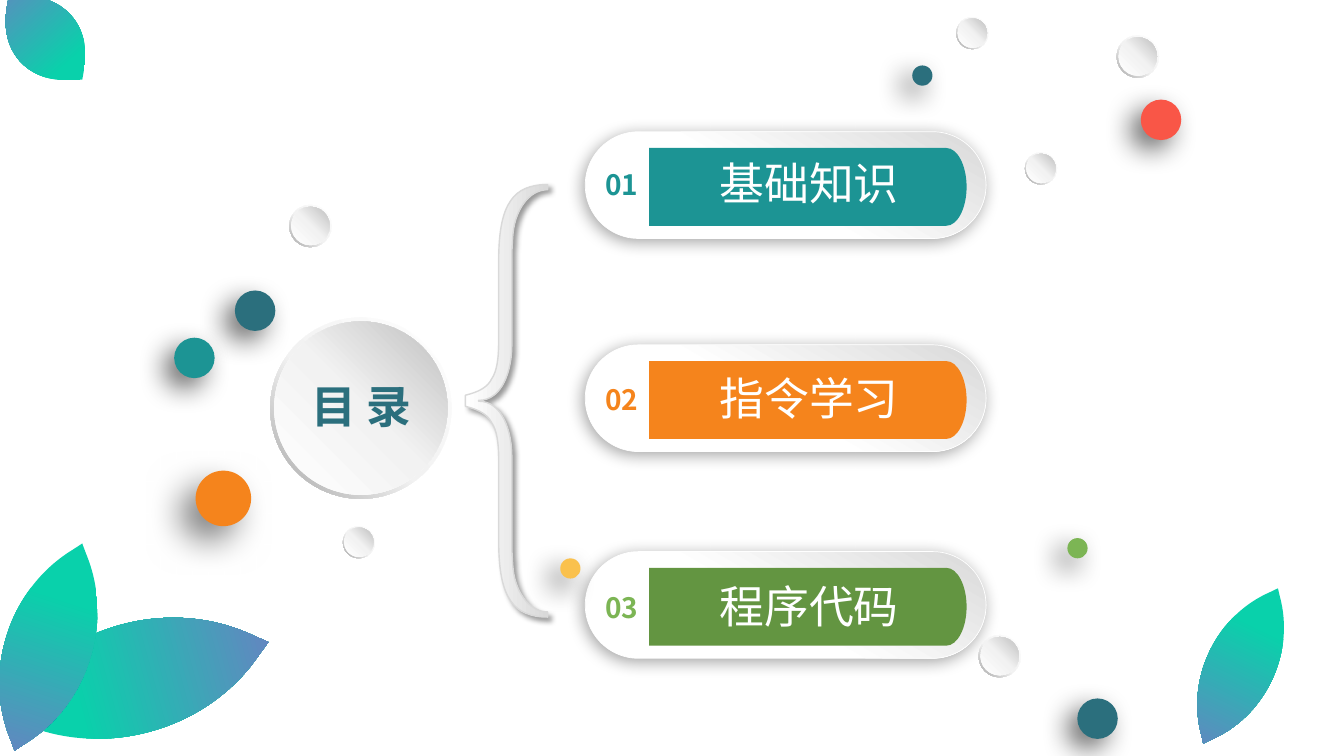
import pptx
import pptx.dml.color
import pptx.enum.shapes
import pptx.enum.text
import pptx.util
from lxml import etree
from pptx.oxml.ns import qn

Cm = pptx.util.Cm
SHAPE = pptx.enum.shapes.MSO_SHAPE
FONT = "Noto Sans CJK SC"

# Gradients: (stops as percent and colour, clockwise angle)
BANNER_FADE = ([(45, "FFFFFF"), (100, "D9D9D9")], 300)
BRACE_FADE = ([(0, "FFFFFF"), (100, "D9D9D9")], 0)
RIM_FADE = ([(0, "FFFFFF"), (55, "F2F2F2"), (100, "A6A6A6")], 135)
FACE_FADE = ([(0, "FFFFFF"), (51, "F2F2F2"), (100, "BFBFBF")], 315)
LEAF_FADE = ([(0, "09D1AB"), (31, "09D1AB"), (100, "6E7DC3")], 90)

# Shadows: opacity percent, blur pt, distance pt, direction
BANNER_SHADOW = (34, 12, 3, 135)
BRACE_SHADOW = (40, 4, 3, 45)
DOT_SHADOW = (60, 20, 10, 135)
BIG_DOT_SHADOW = (50, 25, 15, 135)

# Outlines: a segment of one point is a line, of three points a Bezier curve
LABEL = [[(0, 0)], [(7.49, 0)], [(7.77, 0), (8, 0.44), (8, 0.98)],
         [(8, 1.52), (7.77, 1.96), (7.49, 1.96)], [(0, 1.96)]]
BRACE_ARM = [[(0, 5.31)], [(0.33, 5.23), (0.56, 5.11), (0.66, 4.9)],
             [(0.79, 4.72), (0.84, 4.39), (0.84, 3.94)], [(0.84, 1.88)],
             [(0.84, 1.17), (0.94, 0.69), (1.14, 0.41)],
             [(1.32, 0.13), (1.65, 0), (2.07, 0)], [(2.07, 0.13)],
             [(1.6, 0.13), (1.22, 0.66), (1.19, 1.35)], [(1.17, 1.68)], [(1.17, 4.04)],
             [(1.17, 4.67), (0.94, 5.44), (0.33, 5.44)]]
LEAF_QUARTER = [[(0.5, 0)], [(0.42, 0.04)], [(0.16, 0.16), (0, 0.32), (0, 0.5)]]


def color(hex_code):
    return pptx.dml.color.RGBColor.from_string(hex_code)


def apply_format(target, values):
    for attribute, value in values.items():
        setattr(target, attribute, value)


def paint(shape, fill, line=None, shadow=None):
    """Fill with a hex colour or a gradient; line is (colour, width)."""
    if isinstance(fill, str):
        shape.fill.solid()
        shape.fill.fore_color.rgb = color(fill)
    else:
        stops, angle = fill
        shape.fill.gradient()
        shape.fill.gradient_angle = -angle % 360
        stop_list = shape.element.spPr.find(qn("a:gradFill")).find(qn("a:gsLst"))
        for old_stop in list(stop_list):
            stop_list.remove(old_stop)
        for percent, stop_color in stops:
            stop = etree.SubElement(stop_list, qn("a:gs"), pos=str(percent * 1000))
            etree.SubElement(stop, qn("a:srgbClr"), val=stop_color)
    if line:
        shape.line.color.rgb = color(line[0])
        shape.line.width = pptx.util.Pt(line[1])
    else:
        shape.line.fill.background()
    shape.shadow.inherit = False
    if shadow:
        opacity, blur, distance, direction = shadow
        effects = shape.element.spPr.find(qn("a:effectLst"))
        outer = etree.SubElement(
            effects, qn("a:outerShdw"), blurRad=str(blur * 12700), dist=str(distance * 12700),
            dir=str(direction * 60000), algn="ctr", rotWithShape="0")
        shade = etree.SubElement(outer, qn("a:srgbClr"), val="000000")
        etree.SubElement(shade, qn("a:alpha"), val=str(opacity * 1000))


def preset(shapes, kind, box, fill, line=None, shadow=None, adjust=None):
    shape = shapes.add_shape(kind, *map(Cm, box))
    if adjust is not None:
        shape.adjustments[0] = adjust
    paint(shape, fill, line, shadow)


def move(segments, place):
    return [[place(x, y) for x, y in segment] for segment in segments]


def backwards(segments):
    """The same outline drawn from its end to its start."""
    points = [point for segment in segments for point in segment][::-1]
    sizes = [1] + [len(segment) for segment in segments[:0:-1]]
    remaining = iter(points)
    return [[next(remaining) for _ in range(size)] for size in sizes]


def outline(shapes, left, top, segments, fill, line=None, shadow=None):
    corners = [(Cm(left + x), Cm(top + y)) for segment in segments for x, y in segment]
    builder = shapes.build_freeform(*corners[0])
    builder.add_line_segments(corners[1:], close=True)
    shape = builder.convert_to_shape()
    # Join the three steps of each curve into one Bezier
    steps = iter(list(shape.element.iter(qn("a:lnTo"))))
    for segment in segments[1:]:
        first, *others = [next(steps) for _ in segment]
        if others:
            first.tag = qn("a:cubicBezTo")
            for step in others:
                first.append(step[0])
                step.getparent().remove(step)
    paint(shape, fill, line, shadow)
    return shape


def write(shapes, box, text, size, text_color, bold=False, **frame_format):
    frame = shapes.add_textbox(*map(Cm, box)).text_frame
    apply_format(frame, {"word_wrap": True,
                         "auto_size": pptx.enum.text.MSO_AUTO_SIZE.SHAPE_TO_FIT_TEXT,
                         **frame_format})
    paragraph = frame.paragraphs[0]
    paragraph.alignment = pptx.enum.text.PP_ALIGN.CENTER
    run = paragraph.add_run()
    run.text = text
    apply_format(run.font, {"name": FONT, "size": pptx.util.Pt(size), "bold": bold})
    run.font.color.rgb = color(text_color)
    etree.SubElement(run.font._element, qn("a:ea"), typeface=FONT)


def banner(slide, box, text_drop, number, title, label_color, number_color):
    left, top, _, _ = box
    shapes = slide.shapes.add_group_shape().shapes
    preset(shapes, SHAPE.ROUNDED_RECTANGLE, box, BANNER_FADE, ("FFFFFF", 0.5), BANNER_SHADOW, 0.5)
    outline(shapes, left + 1.61, top + 0.41, LABEL, label_color)
    write(shapes, (left + 0.23, top + 0.78 + text_drop, 1.38, 1.12), number, 20, number_color,
          True, word_wrap=False)
    write(shapes, (left + 2.84, top + 0.48 + text_drop, 5.61, 1.63), title, 32, "FFFFFF")


def button(slide, left, top, size, face, caption=None):
    shapes = slide.shapes.add_group_shape().shapes
    inset = (size - face) / 2
    preset(shapes, SHAPE.DONUT, (left, top, size, size), RIM_FADE, adjust=0.049)
    preset(shapes, SHAPE.OVAL, (left + inset, top + inset, face, face), FACE_FADE)
    if caption:
        write(shapes, (left + 0.3, top + 1.55, 3.99, 1.37), caption, 32, "2B6F7D", True,
              margin_left=0, margin_top=0, margin_right=0, margin_bottom=0)


def brace(slide, left, top, height):
    lower_arm = backwards(move(BRACE_ARM, lambda x, y: (x, height - y)))
    outline(slide.shapes, left, top, BRACE_ARM + lower_arm, BRACE_FADE, ("D9D9D9", 1),
            BRACE_SHADOW)


def leaf(slide, left, top, width, height, rotation):
    lower_quarter = backwards(move(LEAF_QUARTER, lambda x, y: (x, 1 - y)))
    left_side = LEAF_QUARTER + lower_quarter[1:]
    right_side = backwards(move(left_side, lambda x, y: (1 - x, y)))
    segments = move(left_side + right_side[1:], lambda x, y: (x * width, y * height))
    outline(slide.shapes, left, top, segments, LEAF_FADE).rotation = rotation


def dot(slide, left, top, size, dot_color, shadow=DOT_SHADOW):
    preset(slide.shapes, SHAPE.OVAL, (left, top, size, size), dot_color, shadow=shadow)


def main():
    deck = pptx.Presentation()
    deck.slide_width, deck.slide_height = Cm(33.87), Cm(19.05)
    slide = deck.slides.add_slide(deck.slide_layouts[6])

    # Contents: hub, brace and chapters
    button(slide, 6.81, 8, 4.57, 4.37, "目 录")
    brace(slide, 11.73, 4.65, 10.9)
    for top, text_drop, *chapter in (
            (3.32, 0, "01", "基础知识", "1C9494", "1C9494"),
            (8.69, 0.04, "02", "指令学习", "F5841C", "F5841C"),
            (13.9, 0.07, "03", "程序代码", "639541", "7CB554")):
        banner(slide, (14.75, top, 10.1, 2.69), text_drop, *chapter)

    # Leaves in the corners
    for place in ((2.01, 13.61, 2.79, 6.96, 254.8), (0.13, 13.56, 2.18, 5.49, 18.1),
                  (30.4, 14.61, 1.73, 4.34, 25.7), (0.28, -0.43, 1.73, 2.79, 138.3)):
        leaf(slide, *place)

    # Grey buttons, small and medium
    for left, top in ((24.1, 0.43), (8.64, 13.26), (25.83, 3.84)):
        button(slide, left, top, 0.81, 0.74)
    for left, top in ((28.14, 0.89), (24.66, 16), (7.29, 5.16)):
        button(slide, left, top, 1.07, 0.97)

    # Coloured dots
    for place in ((28.75, 2.51, 1.02, "F95647"), (22.99, 1.65, 0.51, "2B6F7D"),
                  (5.92, 7.32, 1.02, "2B6F7D"), (14.12, 14.07, 0.51, "FAC14D"),
                  (4.93, 11.86, 1.4, "F5841C", BIG_DOT_SHADOW),
                  (27.15, 17.6, 1.02, "2B6F7D"), (4.39, 8.51, 1.02, "1C9494"),
                  (26.9, 13.56, 0.51, "7CB554")):
        dot(slide, *place)

    deck.save("out.pptx")


if __name__ == "__main__":
    main()
